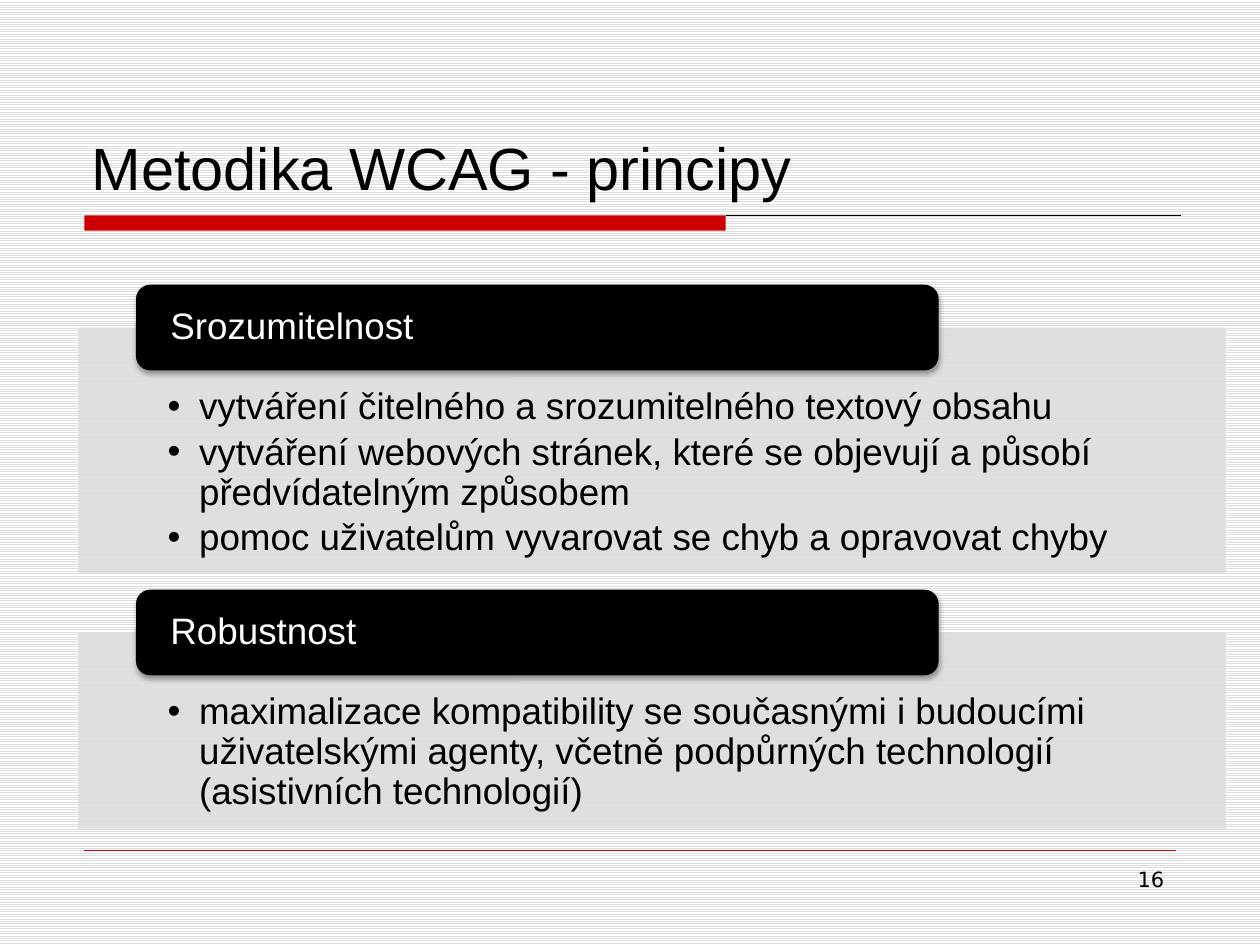
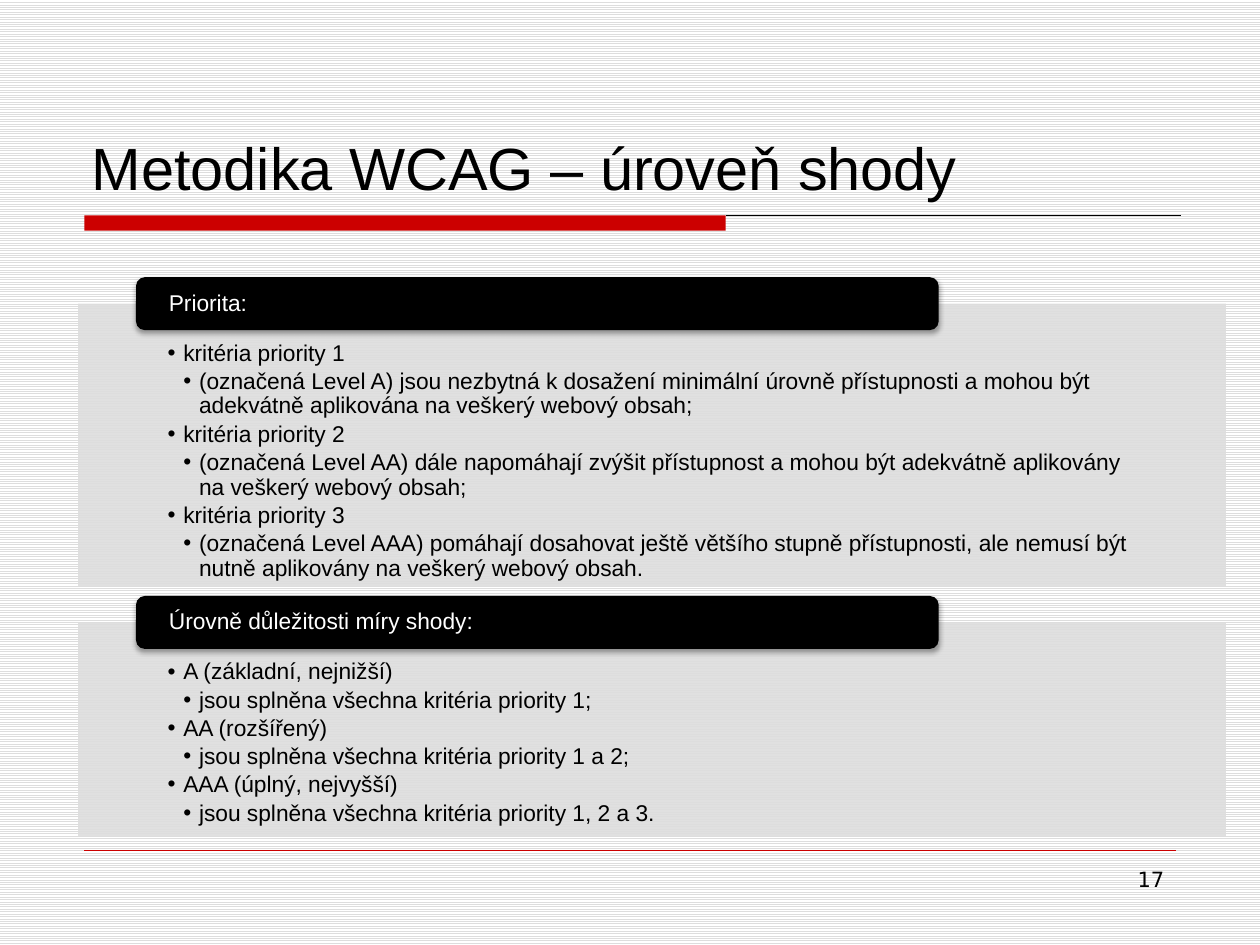
"""Build two slides on WCAG principles and conformance levels."""
from lxml.etree import SubElement
from pptx import Presentation
from pptx.dml.color import RGBColor
from pptx.enum.dml import MSO_PATTERN
from pptx.enum.shapes import MSO_CONNECTOR, MSO_SHAPE
from pptx.enum.text import MSO_ANCHOR, MSO_AUTO_SIZE, PP_ALIGN
from pptx.oxml.ns import qn
from pptx.util import Inches, Pt

BLACK, WHITE, RED, GREY = "000000", "FFFFFF", "CC0000", "DDDDDD"

SLIDES = [
    {
        "number": "16", "title": "Metodika WCAG - principy",
        "size": 21, "top": 2.26, "header": 0.68, "gap": 0.13,
        "inset_top": 0.48, "inset_bottom": 0.16, "indent": 0.25,
        "sections": [
            ("Srozumitelnost", 1.95, [
                (0, "vytváření čitelného a srozumitelného textový obsahu"),
                (0, "vytváření webových stránek, které se objevují a působí předvídatelným způsobem"),
                (0, "pomoc uživatelům vyvarovat se chyb a opravovat chyby"),
            ]),
            ("Robustnost", 1.56, [
                (0, "maximalizace kompatibility se současnými i budoucími uživatelskými agenty, "
                    "včetně podpůrných technologií (asistivních technologií)"),
            ]),
        ],
    },
    {
        "number": "17", "title": "Metodika WCAG – úroveň shody",
        "size": 13, "top": 2.2, "header": 0.42, "gap": 0.08,
        "inset_top": 0.3, "inset_bottom": 0.1, "indent": 0.25 / 2,
        "sections": [
            ("Priorita:", 2.24, [
                (0, "kritéria priority 1"),
                (1, "(označená Level A) jsou nezbytná k dosažení minimální úrovně přístupnosti "
                    "a mohou být adekvátně aplikována na veškerý webový obsah;"),
                (0, "kritéria priority 2"),
                (1, "(označená Level AA) dále napomáhají zvýšit přístupnost a mohou být "
                    "adekvátně aplikovány na veškerý webový obsah;"),
                (0, "kritéria priority 3"),
                (1, "(označená Level AAA) pomáhají dosahovat ještě většího stupně přístupnosti, "
                    "ale nemusí být nutně aplikovány na veškerý webový obsah."),
            ]),
            ("Úrovně důležitosti míry shody:", 1.7, [
                (0, "A (základní, nejnižší)"),
                (1, "jsou splněna všechna kritéria priority 1;"),
                (0, "AA (rozšířený)"),
                (1, "jsou splněna všechna kritéria priority 1 a 2;"),
                (0, "AAA (úplný, nejvyšší)"),
                (1, "jsou splněna všechna kritéria priority 1, 2 a 3."),
            ]),
        ],
    },
]


def paint(color_format, color):
    """Apply a hex colour to a fill, line or font colour."""
    color_format.rgb = RGBColor.from_string(color)


def style(box, size, color=BLACK, font="Arial", align=PP_ALIGN.LEFT, anchor=MSO_ANCHOR.TOP):
    """Format every run and the frame of a text shape."""
    frame = box.text_frame
    frame.word_wrap = True
    frame.auto_size = MSO_AUTO_SIZE.NONE
    frame.vertical_anchor = anchor
    for para in frame.paragraphs:
        para.alignment = align
        for span in para.runs:
            span.font.size = Pt(size)
            span.font.name = font
            paint(span.font.color, color)


deck = Presentation()
deck.slide_width, deck.slide_height = Inches(10), Inches(7.5)
pattern = deck.slide_master.background.fill
pattern.patterned()
pattern.pattern = MSO_PATTERN.LIGHT_HORIZONTAL
paint(pattern.fore_color, GREY)
paint(pattern.back_color, WHITE)
two_content = deck.slide_layouts[3]

for content in SLIDES:
    page = deck.slides.add_slide(two_content)
    title, *panels = page.placeholders
    title.left, title.top = Inches(0.63), Inches(0.33)
    title.width, title.height = Inches(8.75), Inches(1.33)
    title.text_frame.text = content["title"]
    style(title, 34, anchor=MSO_ANCHOR.BOTTOM)

    band = page.shapes.add_shape(
        MSO_SHAPE.RECTANGLE, Inches(0.67), Inches(1.71), Inches(5.09), Inches(0.12))
    band.shadow.inherit = False
    band.fill.solid()
    paint(band.fill.fore_color, RED)
    band.line.fill.background()

    for left, right, y, color, weight in [
            (5.76, 9.37, 1.71, BLACK, 0.75), (0.67, 9.33, 6.75, RED, 0.25)]:
        rule = page.shapes.add_connector(
            MSO_CONNECTOR.STRAIGHT, Inches(left), Inches(y), Inches(right), Inches(y))
        paint(rule.line.color, color)
        rule.line.width = Pt(weight)
        SubElement(rule.element.spPr, qn("a:effectLst"))

    number = page.shapes.add_textbox(Inches(7.17), Inches(6.83), Inches(2.17), Inches(0.52))
    number.text_frame.text = content["number"]
    style(number, 12, font="DejaVu Sans", align=PP_ALIGN.RIGHT)

    size, header_height = content["size"], content["header"]
    top = content["top"]
    for panel, (heading, panel_height, items) in zip(panels, content["sections"]):
        panel_top = top + header_height / 2
        panel.left, panel.top = Inches(0.62), Inches(panel_top)
        panel.width, panel.height = Inches(9.11), Inches(panel_height)
        panel.fill.solid()
        paint(panel.fill.fore_color, GREY)
        tint = panel.element.spPr.find(".//" + qn("a:srgbClr"))
        SubElement(tint, qn("a:alpha"), val="90000")

        frame = panel.text_frame
        frame.margin_left = frame.margin_right = Inches(0.71)
        frame.margin_top = Inches(content["inset_top"])
        frame.margin_bottom = Inches(content["inset_bottom"])
        frame.text = "\n".join(text for level, text in items)
        for para, (level, text) in zip(frame.paragraphs, items):
            para.level = level
            para.line_spacing = 0.9
            para.space_before = Pt(0)
            para.space_after = Pt(size * 0.16)
            properties = para._p.get_or_add_pPr()
            properties.set("marL", str(Inches(content["indent"] * (level + 1))))
            properties.set("indent", str(-Inches(content["indent"])))
            SubElement(properties, qn("a:buChar"), char="•")
        style(panel, size)

        header = page.shapes.add_shape(
            MSO_SHAPE.ROUNDED_RECTANGLE,
            Inches(1.08), Inches(top), Inches(6.37), Inches(header_height))
        header.fill.solid()
        paint(header.fill.fore_color, BLACK)
        header.line.fill.background()
        header.shadow.inherit = False
        effects = header.element.spPr.find(qn("a:effectLst"))
        shadow = SubElement(effects, qn("a:outerShdw"), blurRad=str(Pt(3.1)),
                            dist=str(Pt(1.8)), dir="5400000", rotWithShape="0")
        shade = SubElement(shadow, qn("a:srgbClr"), val=BLACK)
        SubElement(shade, qn("a:alpha"), val="35000")
        frame = header.text_frame
        frame.margin_left = frame.margin_right = Inches(0.24)
        frame.margin_top = frame.margin_bottom = 0
        frame.text = heading
        frame.paragraphs[0].line_spacing = 0.9
        style(header, size, WHITE, anchor=MSO_ANCHOR.MIDDLE)

        top = panel_top + panel_height + content["gap"]

deck.save("out.pptx")
